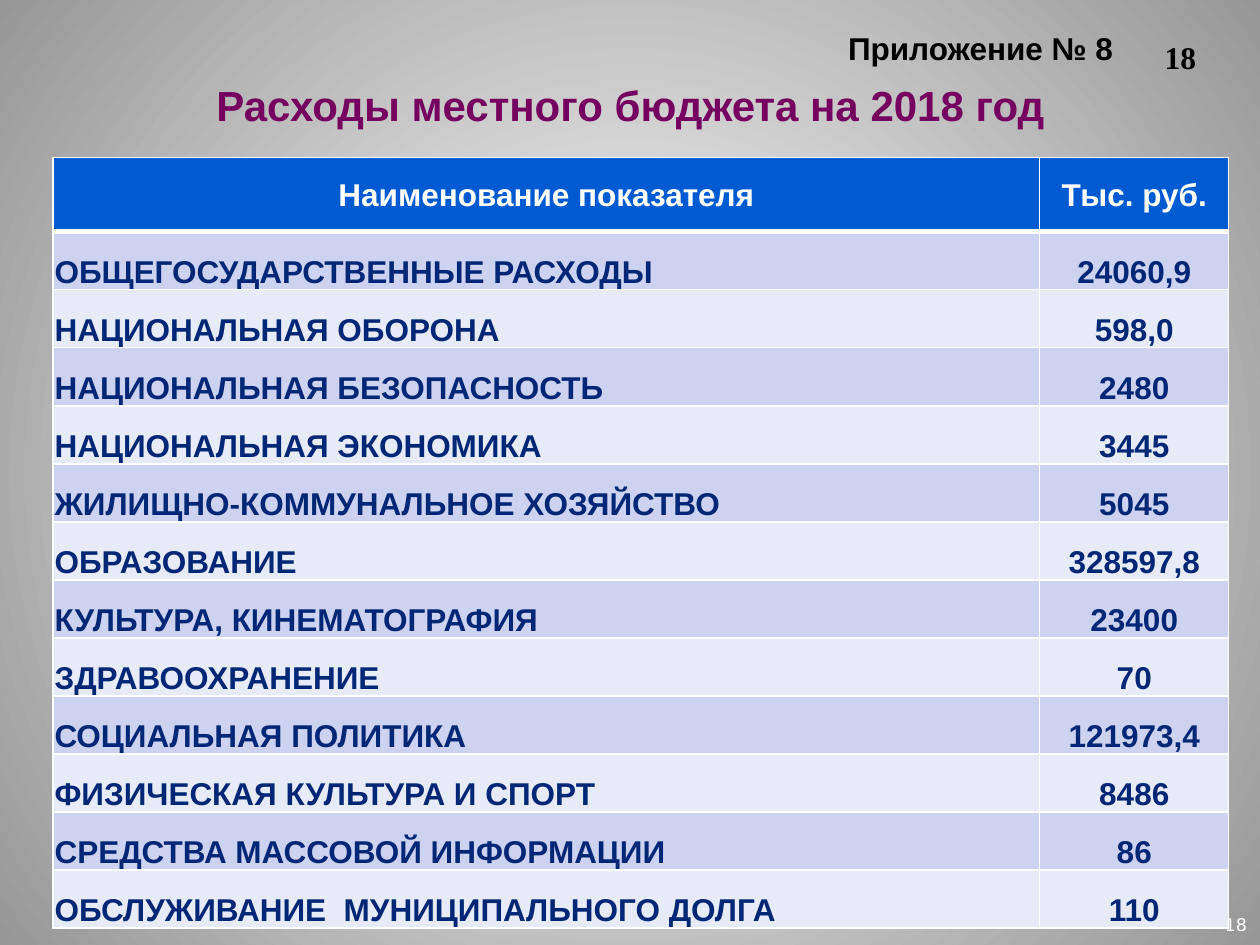
from typing import NamedTuple

from lxml.etree import SubElement
from pptx import Presentation
from pptx.dml.color import RGBColor
from pptx.enum.text import MSO_ANCHOR as Anchor, MSO_AUTO_SIZE as Fit, PP_ALIGN as Align
from pptx.oxml.ns import qn
from pptx.util import Cm, Pt

WHITE, BLACK, NAVY, PLUM, BLUE = "FFFFFF", "000000", "002776", "75005F", "005BD3"
BANDS = ("CCD2EF", "E7EAF7")


class Font(NamedTuple):
    size: float
    color: str
    face: str = "Arial"
    bold: bool = True


class Label(NamedTuple):
    text: str
    box: tuple[float, float, float, float]
    font: Font
    align: Align
    inset: bool = True
    indent: float = 0


class Cost(NamedTuple):
    name: str
    sum: str


LABELS = [
    Label("Приложение № 8", (2.44, 0.58, 20, 0.76), Font(18, BLACK), Align.RIGHT, False),
    Label("18", (24.59, 18.42, 0.58, 0.43), Font(10, WHITE, "DejaVu Sans", False),
          Align.LEFT, False, 0.1),
    Label("18", (23.06, 0.64, 1.47, 1.02), Font(18, BLACK, "Times New Roman"), Align.CENTER),
    Label("Расходы местного бюджета на 2018 год", (0.43, 1.47, 24.56, 1.27),
          Font(24, PLUM), Align.CENTER),
]
HEAD = Cost("Наименование показателя", "Тыс. руб.")
COSTS = [
    Cost("ОБЩЕГОСУДАРСТВЕННЫЕ РАСХОДЫ", "24060,9"),
    Cost("НАЦИОНАЛЬНАЯ ОБОРОНА", "598,0"),
    Cost("НАЦИОНАЛЬНАЯ БЕЗОПАСНОСТЬ", "2480"),
    Cost("НАЦИОНАЛЬНАЯ ЭКОНОМИКА", "3445"),
    Cost("ЖИЛИЩНО-КОММУНАЛЬНОЕ ХОЗЯЙСТВО", "5045"),
    Cost("ОБРАЗОВАНИЕ", "328597,8"),
    Cost("КУЛЬТУРА, КИНЕМАТОГРАФИЯ", "23400"),
    Cost("ЗДРАВООХРАНЕНИЕ", "70"),
    Cost("СОЦИАЛЬНАЯ ПОЛИТИКА", "121973,4"),
    Cost("ФИЗИЧЕСКАЯ КУЛЬТУРА И СПОРТ", "8486"),
    Cost("СРЕДСТВА МАССОВОЙ ИНФОРМАЦИИ", "86"),
    Cost("ОБСЛУЖИВАНИЕ  МУНИЦИПАЛЬНОГО ДОЛГА", "110"),
]
WIDTHS = (19.89, 3.81)
HEAD_H, ROW_H = 1.49, 1.17


def paint(target, color: str) -> None:
    target.rgb = RGBColor.from_string(color)


def write(para, text: str, font: Font, align: Align) -> None:
    para.alignment = align
    run = para.add_run()
    run.text = text
    run.font.name, run.font.size, run.font.bold = font.face, Pt(font.size), font.bold
    paint(run.font.color, font.color)


def shade(slide) -> None:
    fill = slide.background.fill
    fill.gradient()
    for stop, color in zip(fill.gradient_stops, (WHITE, "979797")):
        paint(stop.color, color)
    grad = slide.element.find(".//" + qn("a:gradFill"))
    grad.remove(grad.find(qn("a:lin")))
    path = SubElement(grad, qn("a:path"), {"path": "circle"})
    SubElement(path, qn("a:fillToRect"), dict.fromkeys("ltrb", "50000"))


def add_label(slide, label: Label) -> None:
    frame = slide.shapes.add_textbox(*map(Cm, label.box)).text_frame
    frame.word_wrap = True
    frame.auto_size = Fit.SHAPE_TO_FIT_TEXT
    if not label.inset:
        frame.margin_left = frame.margin_top = frame.margin_right = frame.margin_bottom = 0
    para = frame.paragraphs[0]
    if label.indent:
        para._p.get_or_add_pPr().set("marL", str(Cm(label.indent)))
    write(para, label.text, label.font, label.align)


def edge(cell, base: float) -> None:
    props = cell._tc.get_or_add_tcPr()
    for side, width in zip("LRTB", (1, 1, 1, base)):
        line = SubElement(props, qn(f"a:ln{side}"), {"w": str(Pt(width))})
        solid = SubElement(line, qn("a:solidFill"))
        SubElement(solid, qn("a:srgbClr"), {"val": WHITE})


def fill_cell(cell, text: str, row: int, col: int) -> None:
    head = row == 0
    edge(cell, 3 if head else 1)
    cell.fill.solid()
    paint(cell.fill.fore_color, BLUE if head else BANDS[(row - 1) % 2])
    cell.margin_left = cell.margin_top = cell.margin_right = Cm(0.03)
    cell.margin_bottom = 0
    cell.vertical_anchor = Anchor.MIDDLE if head else Anchor.BOTTOM
    align = Align.CENTER if head or col else Align.LEFT
    write(cell.text_frame.paragraphs[0], text, Font(18, WHITE if head else NAVY), align)


def add_costs(slide) -> None:
    rows = [HEAD, *COSTS]
    high = HEAD_H + ROW_H * len(COSTS)
    table = slide.shapes.add_table(len(rows), len(WIDTHS), Cm(1.07), Cm(3.18),
                                   Cm(sum(WIDTHS)), Cm(high)).table
    for col, width in zip(table.columns, WIDTHS):
        col.width = Cm(width)
    for r, cost in enumerate(rows):
        table.rows[r].height = Cm(ROW_H if r else HEAD_H)
        for c, text in enumerate(cost):
            fill_cell(table.cell(r, c), text, r, c)


def main() -> None:
    """Build the slide of local budget spending for 2018."""
    deck = Presentation()
    deck.slide_width, deck.slide_height = Cm(25.4), Cm(19.05)
    slide = deck.slides.add_slide(deck.slide_layouts[6])
    shade(slide)
    for label in LABELS:
        add_label(slide, label)
    add_costs(slide)
    deck.save("out.pptx")


if __name__ == "__main__":
    main()
